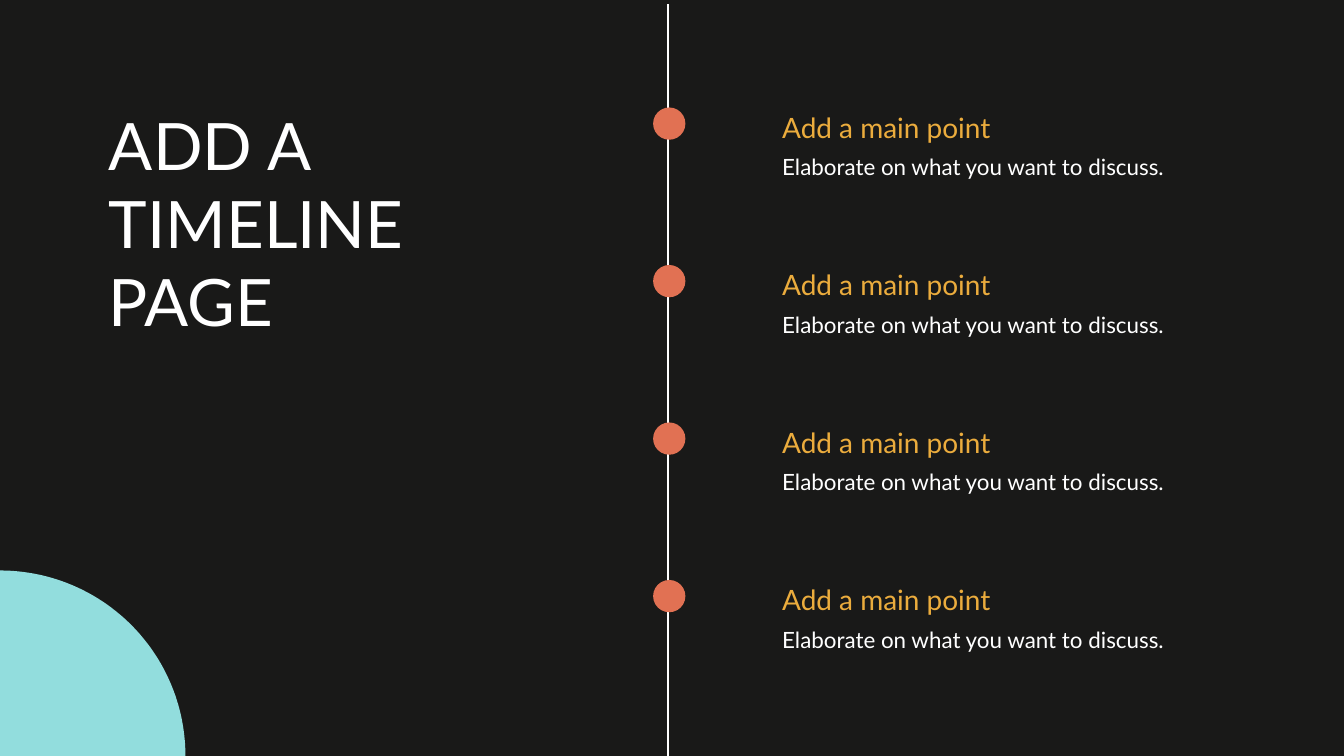
from math import cos, pi, sin

from lxml import etree
from pptx import Presentation
from pptx.dml.color import RGBColor
from pptx.enum.shapes import MSO_CONNECTOR, MSO_SHAPE
from pptx.enum.text import MSO_ANCHOR, MSO_AUTO_SIZE, PP_ALIGN
from pptx.oxml.ns import qn
from pptx.util import Inches, Pt

STRAIGHT = MSO_CONNECTOR.STRAIGHT
OVAL = MSO_SHAPE.OVAL
TOP = MSO_ANCHOR.TOP
LEFT = PP_ALIGN.LEFT
GROW = MSO_AUTO_SIZE.SHAPE_TO_FIT_TEXT

FONT = "Lato"
BACKGROUND = RGBColor(0x19, 0x19, 0x18)
WHITE = RGBColor(0xFF, 0xFF, 0xFF)
CORAL = RGBColor(0xE1, 0x71, 0x53)
AMBER = RGBColor(0xEB, 0xAC, 0x3D)
AQUA = RGBColor(0x92, 0xDD, 0xDD)

WIDTH = 10
HEIGHT = WIDTH * 9 / 16
POINTS = [("Add a main point", "Elaborate on what you want to discuss.")] * 4
FIRST_TOP, STEP = 0.8, HEIGHT / 4.8
DOT_SIZE = 0.24
TEXT_LEFT, TEXT_WIDTH = 5.82, 3.34
CORNER_RADIUS = 1.38
ARC_STEPS = 90


def write(box, text, size, color, line_spacing=1.0):
    frame = box.text_frame
    frame.margin_left = frame.margin_top = 0
    frame.margin_right = frame.margin_bottom = 0
    frame.word_wrap = True
    frame.auto_size = GROW
    frame.vertical_anchor = TOP
    frame.text = text
    para = frame.paragraphs[0]
    para.alignment = LEFT
    para.line_spacing = line_spacing
    font = para.runs[0].font
    font.name = FONT
    font.size = Pt(size)
    font.color.rgb = color


def paint(shape, color):
    shape.shadow.inherit = False
    shape.fill.solid()
    shape.fill.fore_color.rgb = color
    shape.line.fill.background()


def add_title(page, text):
    title = page.shapes.title
    title.left, title.top = Inches(0.81), Inches(0.78)
    title.width, title.height = Inches(3.12), Inches(1.77)
    write(title, text, 35, WHITE)


def add_timeline(page):
    line = page.shapes.add_connector(
        STRAIGHT, Inches(4.97), Inches(HEIGHT), Inches(4.97), Inches(0.03))
    line.line.color.rgb = WHITE
    line.line.width = Pt(0.75)
    etree.SubElement(line._element.spPr, qn("a:effectLst"))


def add_label(group, text, top, height, size, color):
    box = group.shapes.add_textbox(
        Inches(TEXT_LEFT), Inches(top), Inches(TEXT_WIDTH), Inches(height))
    write(box, text, size, color, 1.2)


def add_point(page, heading, detail, top):
    dot = page.shapes.add_shape(
        OVAL, Inches(4.86), Inches(top), Inches(DOT_SIZE), Inches(DOT_SIZE))
    paint(dot, CORAL)
    group = page.shapes.add_group_shape()
    add_label(group, detail, top + 0.3, 0.2, 12, WHITE)
    add_label(group, heading, top - 0.03, 0.25, 15, AMBER)


def add_corner(page):
    angles = [pi / 2 * step / ARC_STEPS for step in range(ARC_STEPS + 1)]
    arc = [(Inches(CORNER_RADIUS * sin(angle)),
            Inches(HEIGHT - CORNER_RADIUS * cos(angle))) for angle in angles]
    builder = page.shapes.build_freeform(0, Inches(HEIGHT))
    builder.add_line_segments(arc, close=True)
    paint(builder.convert_to_shape(), AQUA)


def main():
    deck = Presentation()
    deck.slide_width, deck.slide_height = Inches(WIDTH), Inches(HEIGHT)
    page = deck.slides.add_slide(deck.slide_layouts.get_by_name("Title Only"))
    page.background.fill.solid()
    page.background.fill.fore_color.rgb = BACKGROUND
    add_title(page, "ADD A TIMELINE PAGE")
    add_timeline(page)
    for index, (heading, detail) in enumerate(POINTS):
        add_point(page, heading, detail, FIRST_TOP + index * STEP)
    add_corner(page)
    deck.save("out.pptx")


if __name__ == "__main__":
    main()
